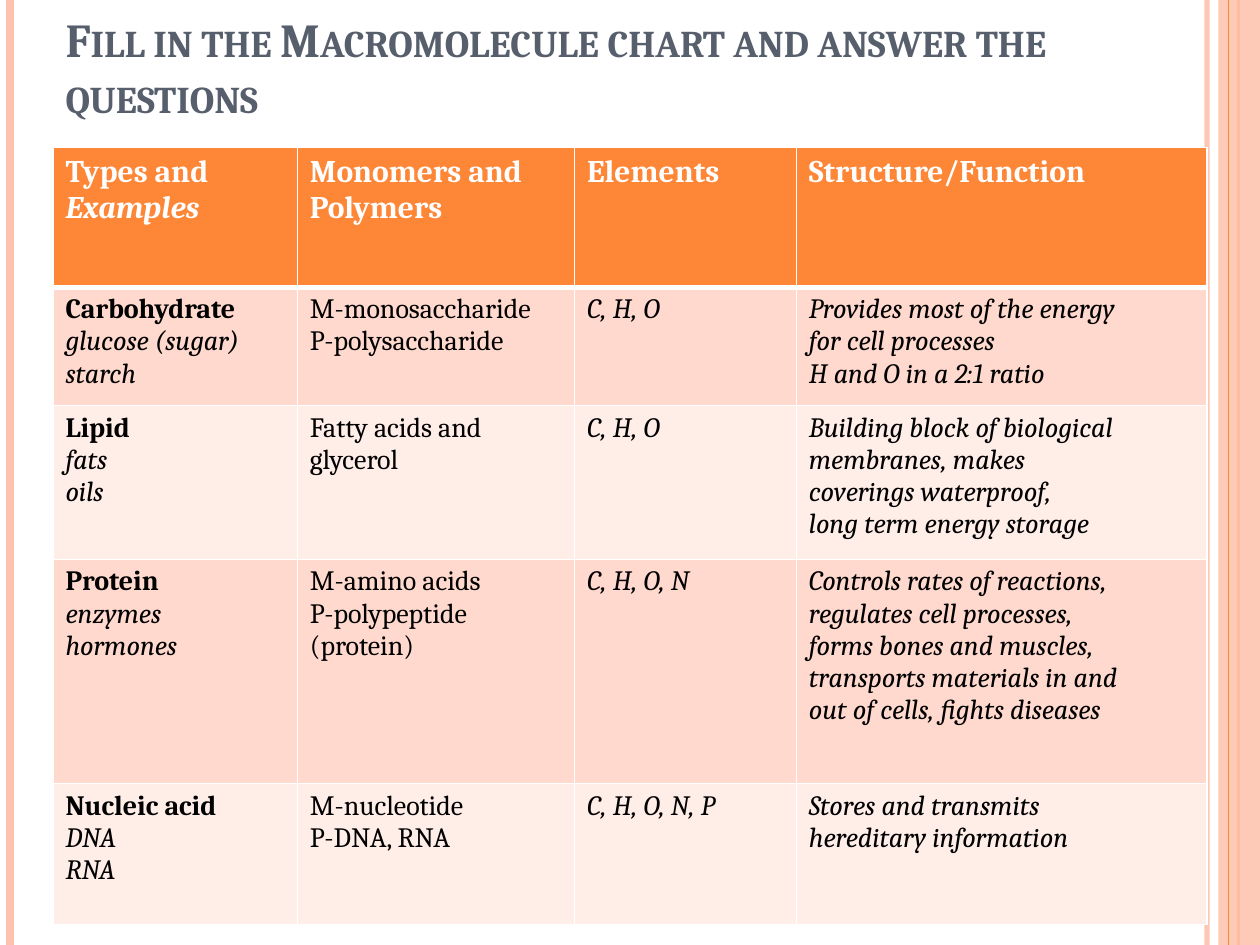
import pptx
import pptx.util
import pptx.dml.color
import pptx.enum.shapes
import pptx.enum.text
import pptx.oxml
import pptx.oxml.ns

Inch, Pt = pptx.util.Inches, pptx.util.Pt
RGB = pptx.dml.color.RGBColor.from_string
qn = pptx.oxml.ns.qn
sub = pptx.oxml.xmlchemy.OxmlElement

HEX = {"peach": "FEC3AE", "orange": "FE8637", "slate": "575F6D", "white": "FFFFFF",
       "black": "000000", "dark": "FFD9CE", "light": "FFEDE8"}
FONT = "Cambria"
WIDE, HIGH = Inch(10), Inch(7.5)

deck = pptx.Presentation()
deck.slide_width, deck.slide_height = WIDE, HIGH
slide = deck.slides.add_slide(deck.slide_layouts[5])


def fade(item, share):
    """Make the first colour of a shape or line partly opaque (share in percent)."""
    tint = item._element.spPr.find(".//" + qn("a:srgbClr"))
    alpha = sub("a:alpha")
    alpha.set("val", str(share * 1000))
    tint.append(alpha)


def write(para, text, size, color, bold=False, slant=False):
    run = para.add_run()
    run.text = text
    font = run.font
    font.name, font.size, font.bold, font.italic = FONT, Pt(size), bold, slant
    font.color.rgb = RGB(HEX[color])
    return run


# Side stripes: share of the width, weight, colour, opacity; the band lies under the last
stripes = [(0.958, 3, "peach", 93), (0.008, 4.5, "peach", 100),
           (0.983, 1.5, "orange", 100), (0.975, 0.75, "orange", 100)]
for share, weight, color, solid in stripes:
    if share == 0.975:
        left = int(WIDE * 0.967)
        band = slide.shapes.add_shape(pptx.enum.shapes.MSO_SHAPE.RECTANGLE,
                                      left, 0, WIDE - left, HIGH)
        band.shadow.inherit = False
        band.fill.solid()
        band.fill.fore_color.rgb = RGB(HEX["peach"])
        band.line.fill.background()
        fade(band, 87)
    x = int(WIDE * share)
    stripe = slide.shapes.add_connector(pptx.enum.shapes.MSO_CONNECTOR.STRAIGHT, x, 0, x, HIGH)
    stripe.line.width = Pt(weight)
    stripe.line.color.rgb = RGB(HEX[color])
    stripe._element.spPr.append(sub("a:effectLst"))
    fade(stripe, solid)

# Title
title = slide.shapes.title
title.left, title.top, title.width, title.height = Inch(0.42), Inch(0.33), Inch(9), Inch(0.7)
frame = title.text_frame
frame.word_wrap = True
frame.auto_size = pptx.enum.text.MSO_AUTO_SIZE.NONE
frame.vertical_anchor = pptx.enum.text.MSO_ANCHOR.BOTTOM
para = frame.paragraphs[0]
para.alignment = pptx.enum.text.PP_ALIGN.LEFT
run = write(para, "Fill in the Macromolecule chart and answer the questions", 27, "slate", bold=True)
run._r.get_or_add_rPr().set("cap", "small")

# Table: each cell is a list of paragraphs, each "\n" a line break
heads = ["Types and |Examples", "Monomers and Polymers", "Elements", "Structure/Function"]
rows = [
    [["Carbohydrate", "glucose (sugar)", "starch"],
     ["M-monosaccharide", "P-polysaccharide"],
     ["C, H, O"],
     ["Provides most of the energy", "for cell processes\nH and O in a 2:1 ratio"]],
    [["Lipid", "fats", "oils"],
     ["Fatty acids and glycerol"],
     ["C, H, O"],
     ["Building block of biological", "membranes, makes", "coverings waterproof,",
      "long term energy storage"]],
    [["Protein", "enzymes", "hormones"],
     ["M-amino acids", "P-polypeptide (protein)"],
     ["C, H, O, N"],
     ["Controls rates of reactions,", "regulates cell processes,", "forms bones and muscles,",
      "transports materials in and", "out of cells, fights diseases"]],
    [["Nucleic acid", "DNA", "RNA"],
     ["M-nucleotide", "P-DNA, RNA"],
     ["C, H, O, N, P"],
     ["Stores and transmits", "hereditary information"]],
]
widths = [1.94, 2.2, 1.76, 3.26]
heights = [1.11, 0.94, 1.22, 1.78, 1.12]
table = slide.shapes.add_table(len(heights), len(widths), Inch(0.42), Inch(1.17),
                               Inch(sum(widths)), Inch(sum(heights))).table
table.horz_banding = False
for col, width in zip(table.columns, widths):
    col.width = Inch(width)
for row, height in zip(table.rows, heights):
    row.height = Inch(height)

for r in range(len(heights)):
    for c in range(len(widths)):
        cell = table.cell(r, c)
        props = cell._tc.get_or_add_tcPr()
        for side in "LRTB":
            edge = sub("a:ln" + side)
            thick = (r, side) in [(0, "B"), (1, "T")]
            edge.set("w", str(Pt(3 if thick else 1)))
            fill, tint = sub("a:solidFill"), sub("a:srgbClr")
            tint.set("val", HEX["white"])
            fill.append(tint)
            edge.append(fill)
            props.append(edge)
        cell.fill.solid()
        shade = "orange" if r == 0 else "dark" if r % 2 else "light"
        cell.fill.fore_color.rgb = RGB(HEX[shade])
        frame = cell.text_frame
        if r == 0:
            for i, part in enumerate(heads[c].split("|")):
                write(frame.paragraphs[0], part, 18, "white", bold=True, slant=i > 0)
            continue
        for i, text in enumerate(rows[r - 1][c]):
            para = frame.add_paragraph() if i else frame.paragraphs[0]
            name = c == 0 and i == 0
            for j, line in enumerate(text.split("\n")):
                if j:
                    para.add_line_break()
                write(para, line, 16, "black", bold=name, slant=c != 1 and not name)

deck.save("out.pptx")
